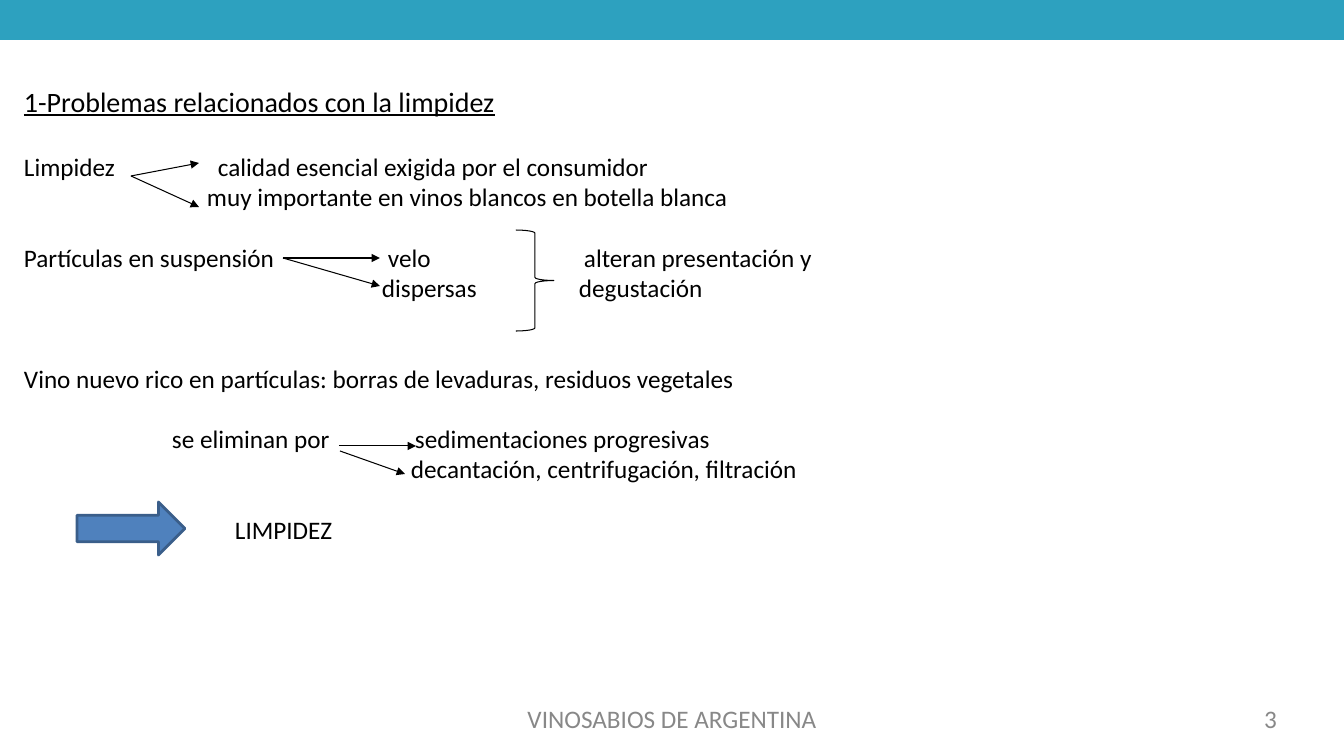
"""Build the slide on clarity problems in wine."""
from typing import NamedTuple

from lxml import etree
from pptx import Presentation
from pptx import util as u
from pptx.dml.color import RGBColor
from pptx.enum import shapes, text
from pptx.oxml.ns import qn

SCALE = 914400 / 100.8
BLACK = RGBColor(0, 0, 0)
GREY = RGBColor(0x88, 0x88, 0x88)
TEAL = RGBColor(0x2D, 0xA1, 0xBF)
BLUE = RGBColor(0x4F, 0x81, 0xBD)
NAVY = RGBColor(0x3A, 0x5E, 0x8A)
FONT = "Calibri"
LEFT = 24
LEAD = 1.2
BLANK = 21.6


class Box(NamedTuple):
    """Left, top, width and height in px."""
    x: int
    y: int
    w: int
    h: int


class Line(NamedTuple):
    """One line of text; each bit after the first starts at its tab stop."""
    bits: tuple[str, ...]
    stops: tuple[int, ...] = ()
    gap: float = 0
    size: int = 18
    under: bool = False


class Arrow(NamedTuple):
    """Start and end of an arrow in px."""
    x1: int
    y1: int
    x2: int
    y2: int


LINES = (
    Line(("1-Problemas relacionados con la limpidez",), size=20, under=True),
    Line(("Limpidez", "calidad esencial exigida por el consumidor"), (218,), 24),
    Line(("", "muy importante en vinos blancos en botella blanca"), (207,)),
    Line(("Partículas en suspensión", "velo", "alteran presentación y"),
         (388, 584), BLANK),
    Line(("", "dispersas", "degustación"), (382, 579)),
    Line(("Vino nuevo rico en partículas: borras de levaduras, residuos vegetales",),
         gap=2 * BLANK),
    Line(("", "se eliminan por", "sedimentaciones progresivas"), (172, 415), BLANK),
    Line(("", "decantación, centrifugación, filtración"), (411,)),
    Line(("", "LIMPIDEZ"), (235,), BLANK),
)
ARROWS = (
    Arrow(131, 176, 199, 163),
    Arrow(131, 176, 199, 207),
    Arrow(283, 258, 380, 258),
    Arrow(283, 258, 380, 286),
    Arrow(339, 446, 416, 446),
    Arrow(340, 451, 405, 474),
)


def px(n: int) -> u.Emu:
    """Turn px into EMU."""
    return u.Emu(round(n * SCALE))


def add_box(slide, box: Box, wrap: bool = True):
    """Add a text frame with no margins."""
    frame = slide.shapes.add_textbox(*map(px, box)).text_frame
    frame.margin_left = frame.margin_right = 0
    frame.margin_top = frame.margin_bottom = 0
    frame.word_wrap = wrap
    return frame


def add_run(para, words: str, size: int, color: RGBColor, under: bool = False) -> None:
    """Add one styled run."""
    run = para.add_run()
    run.text = words
    font = run.font
    font.name, font.size, font.underline = FONT, u.Pt(size), under
    font.color.rgb = color


def add_line(para, line: Line) -> None:
    """Fill a paragraph with the bits of a line."""
    para.line_spacing = u.Pt(line.size * LEAD)
    para.space_before = u.Pt(line.gap)
    if line.stops:
        tabs = etree.SubElement(para._p.get_or_add_pPr(), qn("a:tabLst"))
        for stop in line.stops:
            etree.SubElement(tabs, qn("a:tab"), pos=str(px(stop - LEFT)), algn="l")
    for i, bit in enumerate(line.bits):
        words = "\t" + bit if i else bit
        if words:
            add_run(para, words, line.size, BLACK, line.under)


def add_note(slide, box: Box, words: str, align, wrap: bool) -> None:
    """Add a grey footer text."""
    frame = add_box(slide, box, wrap)
    para = frame.paragraphs[0]
    para.alignment = align
    add_run(para, words, 18, GREY)
    frame.auto_size = text.MSO_AUTO_SIZE.SHAPE_TO_FIT_TEXT


def add_form(slide, kind, box: Box, fill: RGBColor | None,
             edge: RGBColor | None = None, width: float = 0.75) -> None:
    """Add a preset shape with an optional fill and outline."""
    form = slide.shapes.add_shape(kind, *map(px, box))
    form.shadow.inherit = False
    if fill is None:
        form.fill.background()
    else:
        form.fill.solid()
        form.fill.fore_color.rgb = fill
    if edge is None:
        form.line.fill.background()
    else:
        form.line.color.rgb = edge
        form.line.width = u.Pt(width)


def add_arrow(slide, arrow: Arrow) -> None:
    """Add a thin black line with a triangle head."""
    link = slide.shapes.add_connector(shapes.MSO_CONNECTOR.STRAIGHT, *map(px, arrow))
    link.line.color.rgb = BLACK
    link.line.width = u.Pt(0.75)
    etree.SubElement(link.line._get_or_add_ln(), qn("a:tailEnd"), type="triangle")
    etree.SubElement(link._element.spPr, qn("a:effectLst"))


def main() -> None:
    """Draw and save the slide."""
    deck = Presentation()
    deck.slide_width, deck.slide_height = px(1344), px(756)
    slide = deck.slides.add_slide(deck.slide_layouts[6])
    kinds = shapes.MSO_SHAPE
    add_form(slide, kinds.RECTANGLE, Box(0, 0, 1344, 40), TEAL)
    add_note(slide, Box(457, 703, 430, 26), "VINOSABIOS DE ARGENTINA",
             text.PP_ALIGN.CENTER, True)
    frame = add_box(slide, Box(LEFT, 84, 1320, 593))
    for i, line in enumerate(LINES):
        add_line(frame.add_paragraph() if i else frame.paragraphs[0], line)
    add_note(slide, Box(1263, 703, 14, 26), "3", text.PP_ALIGN.RIGHT, False)
    for arrow in ARROWS:
        add_arrow(slide, arrow)
    add_form(slide, kinds.RIGHT_BRACE, Box(516, 230, 38, 101), None, BLACK)
    add_form(slide, kinds.RIGHT_ARROW, Box(77, 502, 108, 53), BLUE, NAVY, 2)
    deck.save("out.pptx")


if __name__ == "__main__":
    main()
